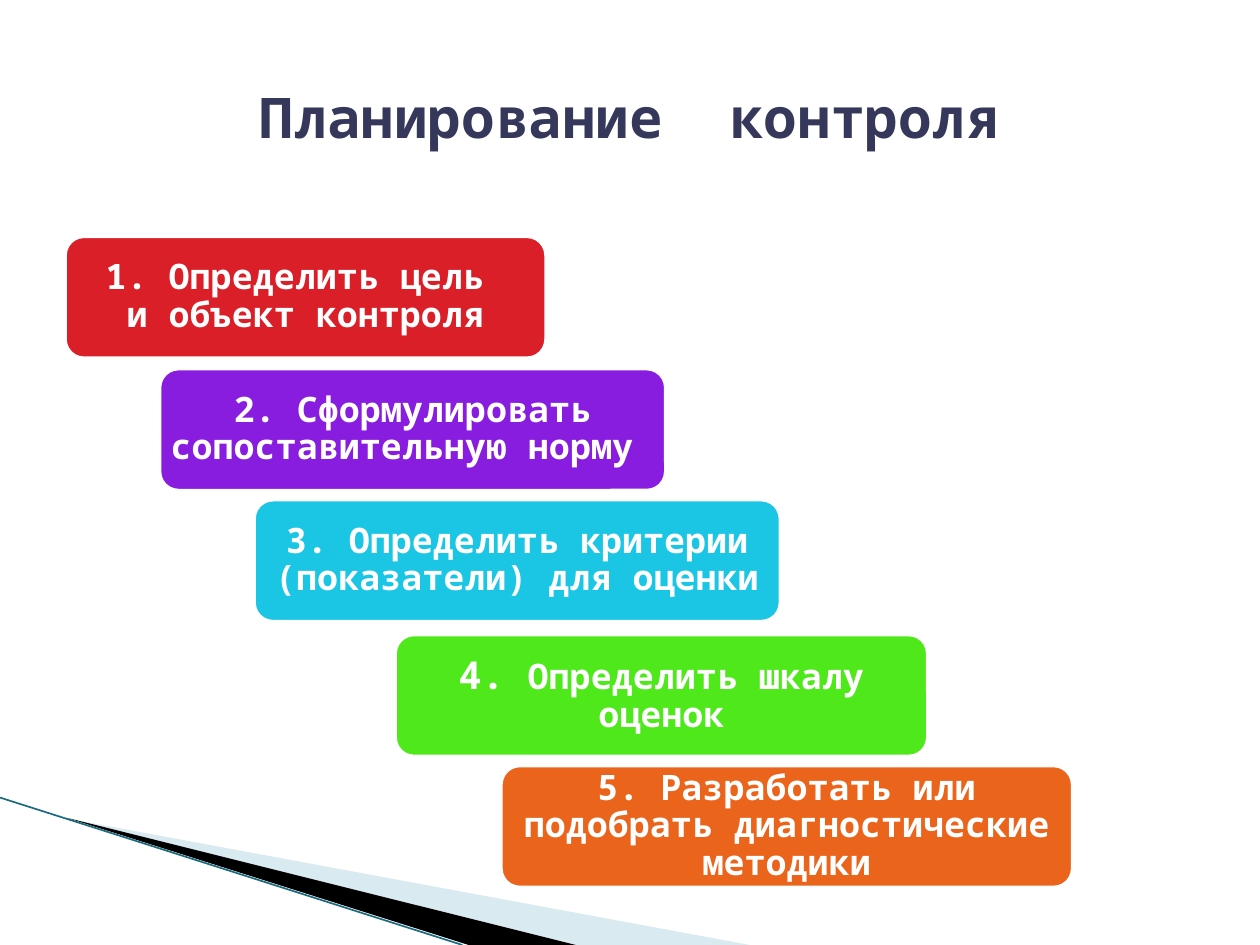
from dataclasses import dataclass

from lxml.etree import SubElement
from pptx import Presentation
from pptx.dml.color import RGBColor
from pptx.enum.shapes import MSO_CONNECTOR, MSO_SHAPE
from pptx.enum.text import MSO_ANCHOR, PP_ALIGN
from pptx.oxml.ns import qn
from pptx.slide import Slide
from pptx.util import Inches, Pt


@dataclass(frozen=True)
class Theme:
    font: str = "Noto Sans Mono"
    title: str = "35385A"
    white: str = "FFFFFF"
    pale_wedge: str = "A0CBDC"
    dark_wedge: str = "000000"
    edge: str = "1B6B80"
    title_size: int = 32
    step_size: int = 20
    large_number_size: int = 22


@dataclass(frozen=True)
class Span:
    text: str
    size: int


@dataclass(frozen=True)
class Step:
    left: float
    top: float
    width: float
    color: str
    lines: tuple[tuple[Span, ...], ...]
    inset: float = 0.03


@dataclass(frozen=True)
class Wedge:
    points: tuple[tuple[float, float], ...]
    color: str
    opacity: int = 100


THEME = Theme()
STEP_HEIGHT = 1


def plain(text: str) -> tuple[Span, ...]:
    return (Span(text, THEME.step_size),)


STEPS = (
    Step(0.5, 1.86, 3.85, "DA1F28",
         (plain("1. Определить цель "), plain("и объект контроля"))),
    Step(1.25, 2.91, 4.05, "881DE0",
         (plain("2. Сформулировать сопоставительную норму "),)),
    Step(2, 3.95, 4.21, "1BC6E5",
         (plain("3. Определить критерии (показатели) для оценки"),)),
    Step(3.12, 5.02, 4.26, "4EE81B",
         ((Span("4. ", THEME.large_number_size),
           Span("Определить шкалу оценок", THEME.step_size)),), 0.04),
    Step(3.96, 6.06, 4.57, "EB641B",
         (plain("5. Разработать или подобрать диагностические методики"),)),
)

WEDGES = (
    Wedge(((0.55, 6.5), (5.95, 7.5), (4.56, 7.5)), THEME.pale_wedge, 40),
    Wedge(((0.53, 6.49), (4.57, 7.5), (3.72, 7.5)), THEME.dark_wedge),
)


def add_span(para, text: str, size: int, color: str) -> None:
    span = para.add_run()
    span.text = text
    span.font.name = THEME.font
    span.font.size = Pt(size)
    span.font.bold = True
    span.font.color.rgb = RGBColor.from_string(color)


def add_wedge(page: Slide, wedge: Wedge) -> None:
    points = [(Inches(x), Inches(y)) for x, y in wedge.points]
    builder = page.shapes.build_freeform(*points[0])
    builder.add_line_segments(points[1:], close=True)
    shape = builder.convert_to_shape()
    shape.shadow.inherit = False
    shape.fill.solid()
    shape.fill.fore_color.rgb = RGBColor.from_string(wedge.color)
    shape.line.fill.background()
    if wedge.opacity < 100:
        color = shape.fill._xPr.find(qn("a:solidFill"))[0]
        SubElement(color, qn("a:alpha"), val=str(wedge.opacity * 1000))


def add_edge(page: Slide) -> None:
    edge = page.shapes.add_connector(
        MSO_CONNECTOR.STRAIGHT,
        Inches(0), Inches(6.33), Inches(3.67), Inches(7.5))
    edge.line.color.rgb = RGBColor.from_string(THEME.edge)
    edge.line.width = Pt(0.95)
    SubElement(edge._element.spPr, qn("a:effectLst"))


def add_title(page: Slide, text: str) -> None:
    title = page.shapes.title
    title.left, title.top = Inches(0.5), Inches(0.3)
    title.width, title.height = Inches(9), Inches(1.25)
    title.text_frame.vertical_anchor = MSO_ANCHOR.MIDDLE
    para = title.text_frame.paragraphs[0]
    para.alignment = PP_ALIGN.CENTER
    add_span(para, text, THEME.title_size, THEME.title)


def add_step(page: Slide, step: Step) -> None:
    box = page.shapes.add_shape(
        MSO_SHAPE.ROUNDED_RECTANGLE, Inches(step.left), Inches(step.top),
        Inches(step.width), Inches(STEP_HEIGHT))
    box.shadow.inherit = False
    box.fill.solid()
    box.fill.fore_color.rgb = RGBColor.from_string(step.color)
    box.line.color.rgb = RGBColor.from_string(THEME.white)
    box.line.width = Pt(4.33)
    frame = box.text_frame
    frame.word_wrap = True
    frame.vertical_anchor = MSO_ANCHOR.MIDDLE
    frame.margin_left = frame.margin_right = Inches(step.inset)
    frame.margin_top = frame.margin_bottom = 0
    para = frame.paragraphs[0]
    para.alignment = PP_ALIGN.CENTER
    para.line_spacing = 0.9
    for index, line in enumerate(step.lines):
        if index:
            para.add_line_break()
        for span in line:
            add_span(para, span.text, span.size, THEME.white)


def main() -> None:
    deck = Presentation()
    deck.slide_width, deck.slide_height = Inches(10), Inches(7.5)
    page = deck.slides.add_slide(deck.slide_layouts.get_by_name("Title Only"))
    for wedge in WEDGES:
        add_wedge(page, wedge)
    add_edge(page)
    add_title(page, "Планирование  контроля")
    for step in STEPS:
        add_step(page, step)
    deck.save("out.pptx")


if __name__ == "__main__":
    main()
